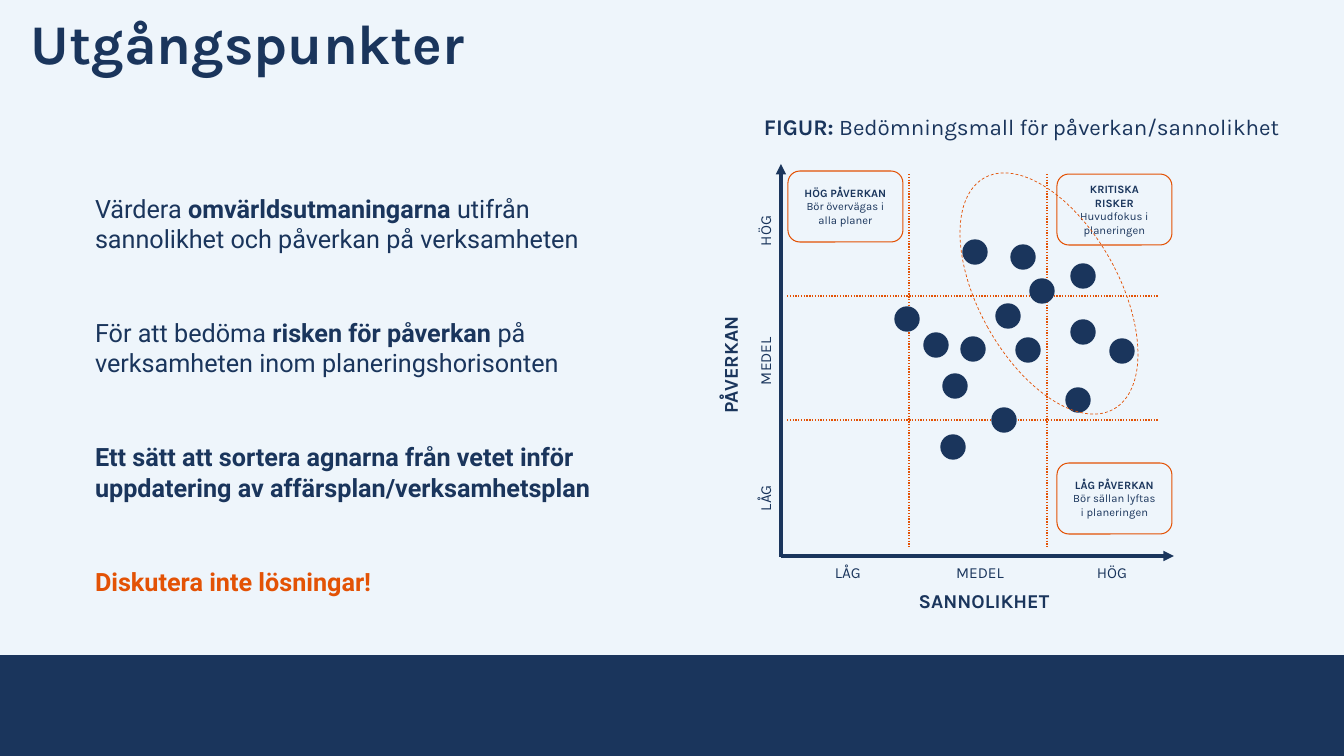
from lxml import etree
from pptx import Presentation
from pptx import util as u
from pptx.dml.color import RGBColor
from pptx.enum import dml, shapes, text
from pptx.oxml.ns import qn

NAVY, ORANGE, PALE = "1A355C", "E35205", "EEF5FB"
CENTER, LEFT = text.PP_ALIGN.CENTER, text.PP_ALIGN.LEFT
TOP, MIDDLE = text.MSO_ANCHOR.TOP, text.MSO_ANCHOR.MIDDLE
SHAPE = shapes.MSO_SHAPE
DOT = 24
DOT_CENTERS = [
    (975, 252), (1023, 257), (1083, 276), (1042, 291), (1008, 316),
    (907, 319), (936, 345), (973, 349), (1028, 350), (1083, 332),
    (1122, 351), (955, 386), (1078, 400), (1004, 420), (953, 447),
]
LEVELS = [("LÅG", 848, 498), ("MEDEL", 980, 361), ("HÖG", 1112, 231)]
CALLOUTS = [
    (788, 171, ["*HÖG PÅVERKAN*", "Bör övervägas i alla planer"]),
    (1057, 174, ["*KRITISKA RISKER*", "Huvudfokus i planeringen"]),
    (1057, 463, ["*LÅG PÅVERKAN*", "Bör sällan lyftas i planeringen"]),
]
POINTS = [
    "Värdera *omvärldsutmaningarna* utifrån sannolikhet och påverkan på verksamheten",
    "För att bedöma *risken för påverkan* på verksamheten inom planeringshorisonten",
    "*Ett sätt att sortera agnarna från vetet inför uppdatering av affärsplan/verksamhetsplan*",
    "*Diskutera inte lösningar!*",
]


def px(n):
    return u.Emu(round(n * 914400 / 100.8))


def rgb(color):
    return RGBColor.from_string(color)


def write(tf, lines, size, font="Karla", color=NAVY, align=LEFT, anchor=TOP,
          wrap=True, inset=None, after=0, spacing=None):
    """Fill a text frame with one paragraph a line; *stars* enclose bold words."""
    tf.word_wrap = wrap
    tf.auto_size = text.MSO_AUTO_SIZE.NONE
    tf.vertical_anchor = anchor
    if inset is not None:
        tf.margin_left = tf.margin_top = tf.margin_right = tf.margin_bottom = px(inset)
    for i, line in enumerate(lines):
        p = tf.add_paragraph() if i else tf.paragraphs[0]
        p.alignment = align
        p.space_before, p.space_after = u.Pt(0), u.Pt(after)
        p.line_spacing = spacing
        for j, part in enumerate(line.split("*")):
            if part:
                r = p.add_run()
                r.text = part
                r.font.name, r.font.size = font, u.Pt(size)
                r.font.bold = j % 2 == 1
                r.font.color.rgb = rgb(color)


def add_text(s, x, y, w, h, lines, size, **fmt):
    box = s.shapes.add_textbox(px(x), px(y), px(w), px(h))
    write(box.text_frame, lines, size, **fmt)
    return box


def add_label(s, cx, cy, label, size, upright=False):
    """Centre a one-line axis label on a point, turned to read upwards if upright."""
    w, h = 130, 30
    box = add_text(s, cx - w // 2, cy - h // 2, w, h, [label], size,
                   align=CENTER, anchor=MIDDLE, wrap=False)
    box.rotation = 270 if upright else 0


def add_shape(s, kind, x, y, w, h, fill=None, line=None, weight=1):
    sp = s.shapes.add_shape(kind, px(x), px(y), px(w), px(h))
    sp.shadow.inherit = False
    if fill:
        sp.fill.solid()
        sp.fill.fore_color.rgb = rgb(fill)
    else:
        sp.fill.background()
    if line:
        sp.line.color.rgb = rgb(line)
        sp.line.width = u.Pt(weight)
    else:
        sp.line.fill.background()
    return sp


def add_line(s, x1, y1, x2, y2, color, weight, dash=None, arrow=False):
    c = s.shapes.add_connector(shapes.MSO_CONNECTOR.STRAIGHT,
                               px(x1), px(y1), px(x2), px(y2))
    c.line.color.rgb = rgb(color)
    c.line.width = u.Pt(weight)
    if dash:
        c.line.dash_style = dash
    if arrow:
        etree.SubElement(c.line._get_or_add_ln(), qn("a:tailEnd"), type="triangle")
    etree.SubElement(c._element.spPr, qn("a:effectLst"))


def add_title(s):
    title = s.shapes.title
    title.left, title.top, title.width, title.height = px(31), px(16), px(1055), px(118)
    write(title.text_frame, ["*Utgångspunkter*"], 40, inset=0, spacing=0.9)


def add_points(s):
    box = add_text(s, 95, 193, 538, 446, POINTS, 18, font="Roboto", inset=0, after=45.6)
    box.text_frame.paragraphs[-1].runs[0].font.color.rgb = rgb(ORANGE)


def add_matrix(s):
    add_text(s, 754, 108, 536, 37,
             ["*FIGUR:* Bedömningsmall för påverkan/sannolikhet"], 16, wrap=False)
    add_line(s, 781, 557, 781, 164, NAVY, 2.5, arrow=True)
    add_line(s, 781, 556, 1174, 556, NAVY, 2.5, arrow=True)
    add_label(s, 984, 601, "*SANNOLIKHET*", 14)
    add_label(s, 730, 365, "*PÅVERKAN*", 14, upright=True)
    for level, x, y in LEVELS:
        add_label(s, x, 572, level, 11)
        add_label(s, 765, y, level, 11, upright=True)

    for x, y, lines in CALLOUTS:
        sp = add_shape(s, SHAPE.ROUNDED_RECTANGLE, x, y, 115, 71, line=ORANGE, weight=0.75)
        write(sp.text_frame, lines, 8, align=CENTER, anchor=MIDDLE)

    dots = dml.MSO_LINE.ROUND_DOT
    for x in (909, 1047):
        add_line(s, x, 174, x, 547, ORANGE, 1, dash=dots)
    for y in (420, 296):
        add_line(s, 787, y, 1159, y, ORANGE, 1, dash=dots)

    for cx, cy in DOT_CENTERS:
        add_shape(s, SHAPE.OVAL, cx - DOT // 2, cy - DOT // 2, DOT, DOT, NAVY, NAVY)
    focus = add_shape(s, SHAPE.OVAL, 979, 161, 140, 265, line=ORANGE, weight=0.5)
    focus.line.dash_style = dml.MSO_LINE.DASH
    focus.rotation = 330.8


def main():
    prs = Presentation()
    prs.slide_width, prs.slide_height = px(1344), px(756)
    s = prs.slides.add_slide(prs.slide_layouts[5])
    s.background.fill.solid()
    s.background.fill.fore_color.rgb = rgb(PALE)
    add_shape(s, SHAPE.RECTANGLE, 0, 655, 1344, 101, NAVY)
    add_title(s)
    add_points(s)
    add_matrix(s)
    prs.save("out.pptx")


if __name__ == "__main__":
    main()
